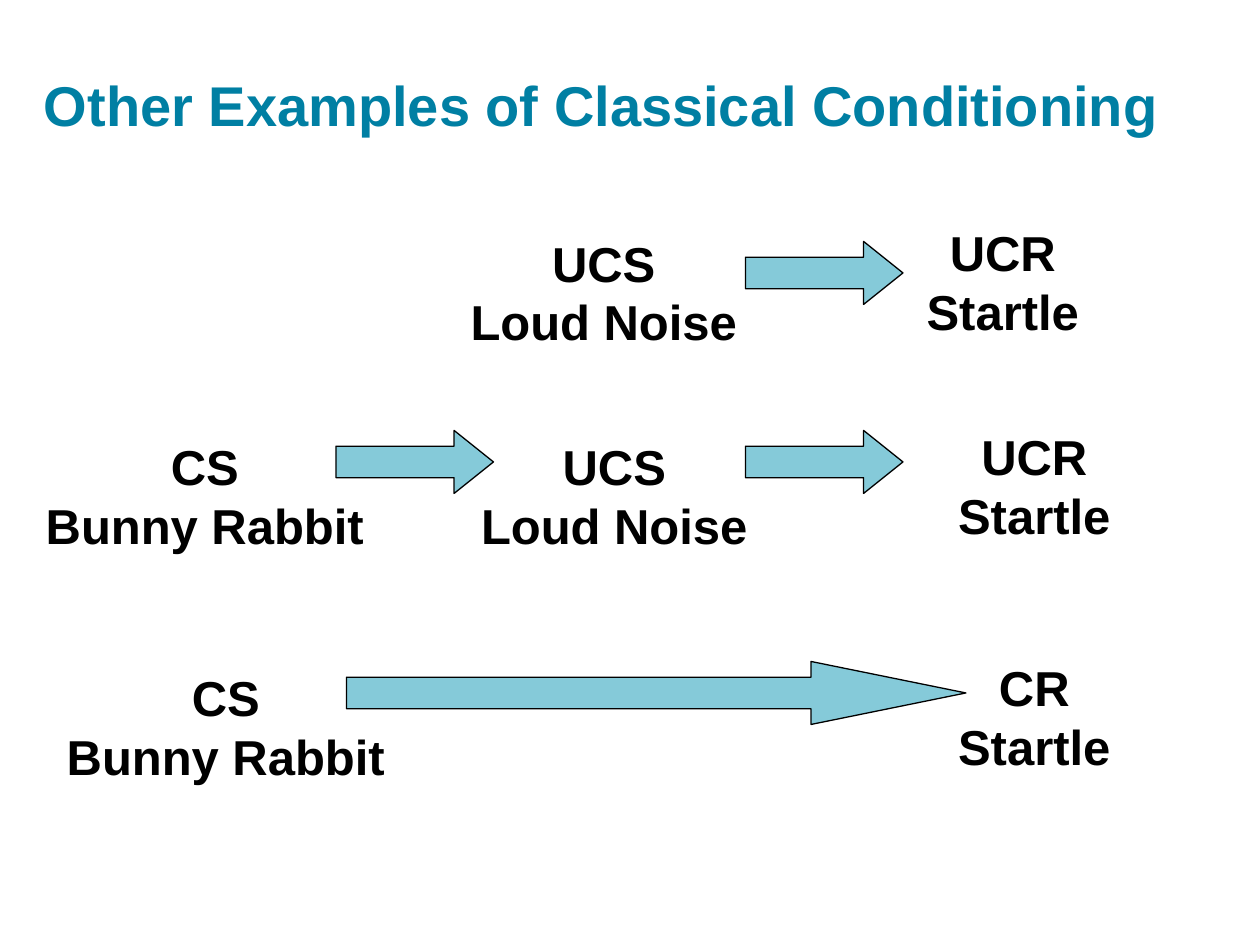
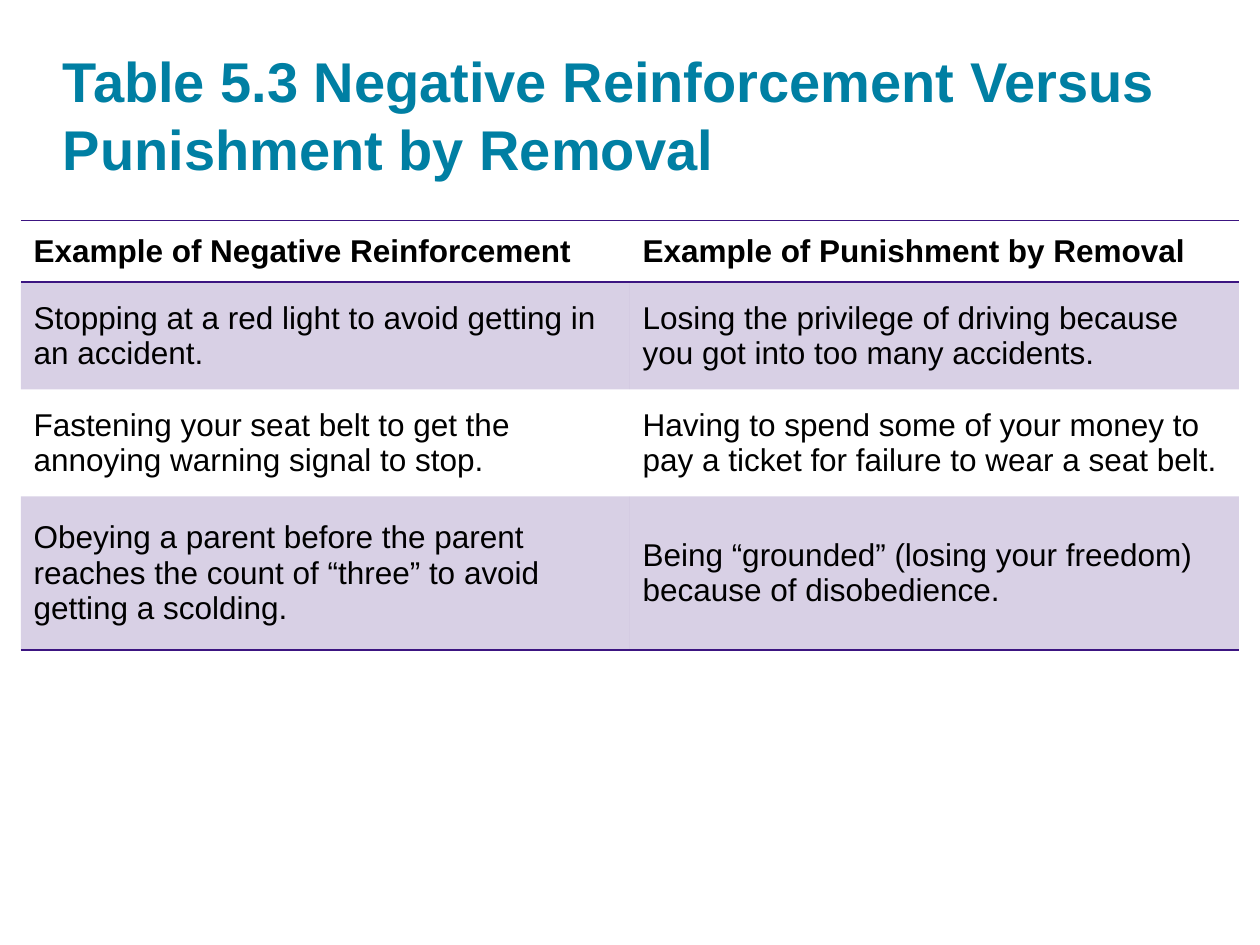
import pptx
import pptx.dml.color
import pptx.enum.shapes
import pptx.enum.text
import pptx.oxml
import pptx.oxml.ns
import pptx.util
from dataclasses import dataclass

ALIGN = pptx.enum.text.PP_ALIGN
ANCHOR = pptx.enum.text.MSO_ANCHOR

# Content: places are columns and rows of a 1/12 inch grid
CONDITIONING_TITLE = "Other Examples of Classical Conditioning"
STAGES = [  # column, row, label, stimulus or response
    (41, 21.6, "UCS", "Loud Noise"),
    (79, 20.6, "UCR", "Startle"),
    (3, 41, "CS", "Bunny Rabbit"),
    (42, 41, "UCS", "Loud Noise"),
    (82, 40, "UCR", "Startle"),
    (5, 63, "CS", "Bunny Rabbit"),
    (82, 62, "CR", "Startle"),
]
ARROWS = [(71, 23, 15), (71, 41, 15), (32, 41, 15), (33, 63, 59)]  # column, row, length
STAGE_SIZE = (33, 12.4)
ARROW_HEIGHT = 6
HEAD_SHARE = 0.25  # arrowhead's share of the arrow's length

TABLE_TITLE = "Table 5.3 Negative Reinforcement Versus Punishment by Removal"
TABLE_ROWS = [
    ("Example of Negative Reinforcement", "Example of Punishment by Removal"),
    ("Stopping at a red light to avoid getting in an accident.",
     "Losing the privilege of driving because you got into too many accidents."),
    ("Fastening your seat belt to get the annoying warning signal to stop.",
     "Having to spend some of your money to pay a ticket for failure to wear a seat belt."),
    ("Obeying a parent before the parent reaches the count of “three” to avoid getting a scolding.",
     "Being “grounded” (losing your freedom) because of disobedience."),
]
ROW_HEIGHTS = [0.49, 0.85, 0.85, 1.22]
TABLE_BOX = (2, 21, 116)  # column, row, width
PLAIN_TABLE_STYLE = "{2D5ABB26-0587-4C30-8999-92F81FD0307C}"


@dataclass(frozen=True)
class Theme:
    font: str = "Arial"
    title_color: str = "007FA3"
    text_color: str = "000000"
    arrow_color: str = "85CAD9"
    table_color: str = "3C1581"
    band_opacity: int = 20
    title_size: int = 32
    stage_size: int = 28
    table_size: int = 18


THEME = Theme()


def grid(cells):
    return pptx.util.Inches(cells / 12)


def rgb(color):
    return pptx.dml.color.RGBColor.from_string(color)


def write_text(frame, text, size, color=THEME.text_color, bold=True,
               align=ALIGN.LEFT, anchor=ANCHOR.TOP, margins=(0.1, 0.05)):
    frame.word_wrap = True
    frame.vertical_anchor = anchor
    frame.margin_left = frame.margin_right = pptx.util.Inches(margins[0])
    frame.margin_top = frame.margin_bottom = pptx.util.Inches(margins[1])
    frame.text = text
    for paragraph in frame.paragraphs:
        paragraph.alignment = align
        for run in paragraph.runs:
            run.font.name = THEME.font
            run.font.size = pptx.util.Pt(size)
            run.font.bold = bold
            run.font.color.rgb = rgb(color)


def add_title(slide, text, left, top, width, height, margin):
    box = slide.shapes.add_textbox(*map(pptx.util.Inches, (left, top, width, height)))
    write_text(box.text_frame, text, THEME.title_size, color=THEME.title_color,
               anchor=ANCHOR.BOTTOM, margins=(margin, margin))


def add_arrow(slide, column, row, length):
    arrow = slide.shapes.add_shape(
        pptx.enum.shapes.MSO_SHAPE.RIGHT_ARROW,
        grid(column), grid(row), grid(length), grid(ARROW_HEIGHT))
    arrow.adjustments[1] = HEAD_SHARE * length / ARROW_HEIGHT
    arrow.shadow.inherit = False
    arrow.fill.solid()
    arrow.fill.fore_color.rgb = rgb(THEME.arrow_color)
    arrow.line.color.rgb = rgb(THEME.text_color)
    arrow.line.width = pptx.util.Pt(0.75)


def style_cell(cell, borders, banded):
    properties = cell._tc.get_or_add_tcPr()
    namespace = pptx.oxml.ns.nsdecls("a")
    for border in borders:
        properties.append(pptx.oxml.parse_xml(
            f'<a:{border} {namespace} w="12700"><a:solidFill>'
            f'<a:srgbClr val="{THEME.table_color}"/></a:solidFill></a:{border}>'))
    if not banded:
        cell.fill.background()
        return
    properties.append(pptx.oxml.parse_xml(
        f'<a:solidFill {namespace}><a:srgbClr val="{THEME.table_color}">'
        f'<a:alpha val="{THEME.band_opacity * 1000}"/></a:srgbClr></a:solidFill>'))


def build_conditioning(slide):
    add_title(slide, CONDITIONING_TITLE, 0.25, 0.24, 9.25, 0.95, margin=0.1)
    for column, row, label, event in STAGES:
        box = slide.shapes.add_textbox(grid(column), grid(row), *map(grid, STAGE_SIZE))
        write_text(box.text_frame, f"{label}\n{event}", THEME.stage_size, align=ALIGN.CENTER)
    for arrow in ARROWS:
        add_arrow(slide, *arrow)


def build_comparison(slide):
    add_title(slide, TABLE_TITLE, 0.5, 0.24, 9, 1.2, margin=0)
    frame = slide.shapes.add_table(
        len(TABLE_ROWS), len(TABLE_ROWS[0]), *map(grid, TABLE_BOX),
        pptx.util.Inches(sum(ROW_HEIGHTS)))
    table = frame.table
    table._tbl.tblPr.find(pptx.oxml.ns.qn("a:tableStyleId")).text = PLAIN_TABLE_STYLE
    # Rules frame the header and close the last row; odd rows are banded
    rules = {0: ("lnT", "lnB"), len(TABLE_ROWS) - 1: ("lnB",)}
    for row, (texts, height) in enumerate(zip(TABLE_ROWS, ROW_HEIGHTS)):
        table.rows[row].height = pptx.util.Inches(height)
        for column, text in enumerate(texts):
            cell = table.cell(row, column)
            write_text(cell.text_frame, text, THEME.table_size, bold=row == 0)
            cell.vertical_anchor = ANCHOR.MIDDLE
            style_cell(cell, rules.get(row, ()), banded=row % 2 == 1)


def main():
    presentation = pptx.Presentation()
    presentation.slide_width = pptx.util.Inches(10)
    presentation.slide_height = pptx.util.Inches(7.5)
    blank = presentation.slide_layouts[6]
    for build in (build_conditioning, build_comparison):
        build(presentation.slides.add_slide(blank))
    presentation.save("out.pptx")


if __name__ == "__main__":
    main()
